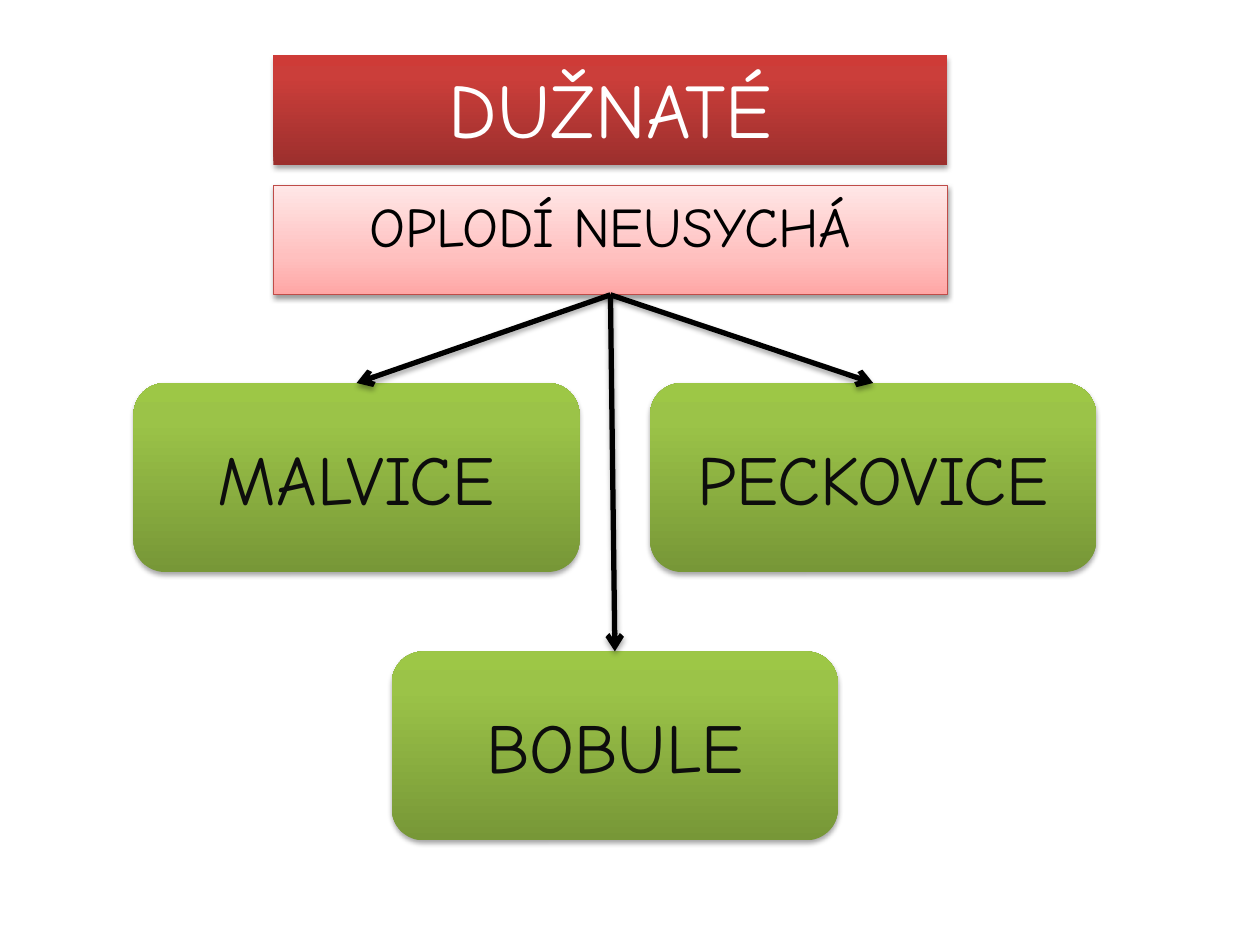
from lxml import etree
from pptx import Presentation
from pptx.dml.color import RGBColor
from pptx.enum import shapes, text
from pptx.oxml import ns
from pptx.util import Inches, Pt

FONT = "Comic Neue"
WHITE = RGBColor(0xFF, 0xFF, 0xFF)
BLACK = RGBColor(0, 0, 0)
INK = RGBColor(0x0D, 0x0D, 0x0D)
RED_EDGE = RGBColor(0xBF, 0x4C, 0x48)
RED = [(0, RGBColor(0x9C, 0x2F, 0x2D)), (80, RGBColor(0xCB, 0x3E, 0x3A)),
       (100, RGBColor(0xCE, 0x3B, 0x37))]
PINK = [(0, RGBColor(0xFF, 0xA6, 0xA5)), (35, RGBColor(0xFF, 0xC0, 0xBF)),
        (100, RGBColor(0xFF, 0xE7, 0xE7))]
GREEN = [(0, RGBColor(0x77, 0x97, 0x37)), (80, RGBColor(0x9B, 0xC3, 0x48)),
         (100, RGBColor(0x9D, 0xC7, 0x46))]


def add_node(parent, tag, **attrs):
    return etree.SubElement(parent, ns.qn(tag), {k: str(v) for k, v in attrs.items()})


def add_shadow(s, alpha=35, dist=1.8):
    effects = add_node(s._element.spPr, "a:effectLst")
    shadow = add_node(effects, "a:outerShdw", blurRad=Pt(3.1), dist=Pt(dist),
                      dir=90 * 60000, rotWithShape=0)
    color = add_node(shadow, "a:srgbClr", val=BLACK)
    add_node(color, "a:alpha", val=alpha * 1000)


def fill_gradient(s, stops):
    s.fill.gradient()
    s.fill.gradient_angle = 90
    stop_list = s._element.spPr.find(".//" + ns.qn("a:gsLst"))
    for old in list(stop_list):
        stop_list.remove(old)
    for position, color in stops:
        stop = add_node(stop_list, "a:gs", pos=position * 1000)
        add_node(stop, "a:srgbClr", val=color)


def add_box(slide, kind, box, label, stops, size, color, anchor, edge=None, **shadow):
    s = slide.shapes.add_shape(kind, *map(Inches, box))
    fill_gradient(s, stops)
    if edge is None:
        s.line.fill.background()
    else:
        s.line.color.rgb = edge
        s.line.width = Pt(0.75)
    add_shadow(s, **shadow)
    tf = s.text_frame
    tf.word_wrap = True
    tf.vertical_anchor = anchor
    p = tf.paragraphs[0]
    p.text = label
    p.alignment = text.PP_ALIGN.CENTER
    p.font.name = FONT
    p.font.size = Pt(size)
    p.font.color.rgb = color
    return s


def add_banner(slide, top, label, stops, size, color, **style):
    return add_box(slide, shapes.MSO_SHAPE.RECTANGLE, (2.17, top, 5.35, 0.87), label,
                   stops, size, color, text.MSO_ANCHOR.TOP, **style)


def add_fruit(slide, left, top, label):
    return add_box(slide, shapes.MSO_SHAPE.ROUNDED_RECTANGLE, (left, top, 3.54, 1.5),
                   label, GREEN, 40, INK, text.MSO_ANCHOR.MIDDLE)


def add_arrow(slide, start, end):
    s = slide.shapes.add_connector(shapes.MSO_CONNECTOR.STRAIGHT, 0, 0, 0, 0)
    s.begin_connect(start, 2)
    s.end_connect(end, 0)
    s.line.color.rgb = BLACK
    s.line.width = Pt(3)
    add_node(s.line._get_or_add_ln(), "a:tailEnd", type="arrow")
    add_shadow(s)


def main():
    prs = Presentation()
    prs.slide_width, prs.slide_height = Inches(10), Inches(7.5)
    slide = prs.slides.add_slide(prs.slide_layouts[6])
    add_banner(slide, 0.44, "DUŽNATÉ", RED, 44, WHITE)
    pericarp = add_banner(slide, 1.47, "OPLODÍ NEUSYCHÁ", PINK, 32, BLACK,
                          edge=RED_EDGE, alpha=38, dist=1.6)
    fruits = [("MALVICE", 3.04), ("BOBULE", 5.17), ("PECKOVICE", 3.04)]
    boxes = [add_fruit(slide, 1.06 + 2.05 * i, top, label)
             for i, (label, top) in enumerate(fruits)]
    for box in boxes:
        add_arrow(slide, pericarp, box)
    prs.save("out.pptx")


main()
